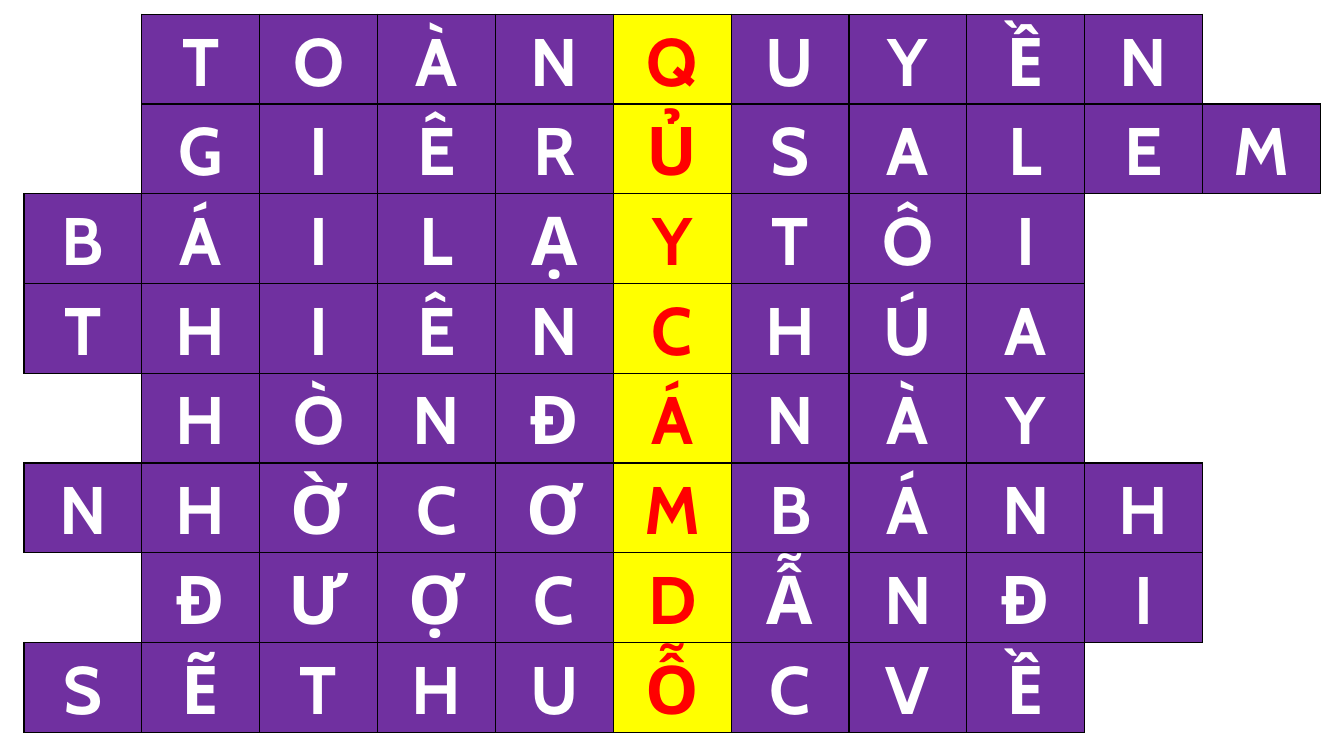
from lxml import etree
from pptx import Presentation
from pptx.dml.color import RGBColor
from pptx.enum import text
from pptx.oxml import ns
from pptx.util import Pt

PURPLE = RGBColor(0x70, 0x30, 0xA0)
YELLOW = RGBColor(0xFF, 0xFF, 0x00)
RED = RGBColor(0xFF, 0x00, 0x00)
WHITE = RGBColor(0xFF, 0xFF, 0xFF)
BLACK = RGBColor(0x00, 0x00, 0x00)

# Each answer with its first column
ANSWERS = [
    (1, "TOÀNQUYỀN"),
    (1, "GIÊRỦSALEM"),
    (0, "BÁILẠYTÔI"),
    (0, "THIÊNCHÚA"),
    (1, "HÒNĐÁNÀY"),
    (0, "NHỜCƠMBÁNH"),
    (1, "ĐƯỢCDẪNĐI"),
    (0, "SẼTHUỖCVỀ"),
]
ROWS, COLS, KEY = len(ANSWERS), 11, 5
WIDE, HIGH = 84.2, 64.1
SIDES = {"L": (0, -1), "R": (0, 1), "T": (-1, 0), "B": (1, 0)}


def add_edge(cell, side, drawn):
    props = cell._tc.get_or_add_tcPr()
    line = etree.SubElement(props, ns.qn("a:ln" + side), w=str(Pt(1)))
    if drawn:
        fill = etree.SubElement(line, ns.qn("a:solidFill"))
        etree.SubElement(fill, ns.qn("a:srgbClr"), val=str(BLACK))
    else:
        etree.SubElement(line, ns.qn("a:noFill"))


# Slide
deck = Presentation()
deck.slide_width, deck.slide_height = Pt(960), Pt(540)
slide = deck.slides.add_slide(deck.slide_layouts[6])

# Crossword grid
frame = slide.shapes.add_table(ROWS, COLS, Pt(17.1), Pt(10.2),
                               Pt(WIDE * COLS), Pt(HIGH * ROWS))
grid = frame.table
grid.first_row = grid.horz_banding = False
for col in grid.columns:
    col.width = Pt(WIDE)
for row in grid.rows:
    row.height = Pt(HIGH)

# Letters by place
letters = {(r, start + i): letter
           for r, (start, word) in enumerate(ANSWERS)
           for i, letter in enumerate(word)}

for r in range(ROWS):
    for c in range(COLS):
        cell = grid.cell(r, c)
        letter = letters.get((r, c))

        # An edge shows where a letter stands on either side of it
        for side, (down, right) in SIDES.items():
            add_edge(cell, side, letter or (r + down, c + right) in letters)

        cell.fill.solid()
        if not letter:
            cell.fill.fore_color.rgb = WHITE
            continue
        cell.fill.fore_color.rgb = YELLOW if c == KEY else PURPLE

        # Letter
        cell.vertical_anchor = text.MSO_ANCHOR.MIDDLE
        cell.margin_left = cell.margin_right = Pt(5)
        cell.margin_top = cell.margin_bottom = Pt(0)
        para = cell.text_frame.paragraphs[0]
        para.alignment = text.PP_ALIGN.CENTER
        para.line_spacing = 1.07
        para.space_after = Pt(8)
        run = para.add_run()
        run.text = letter
        run.font.name = "Cabin"
        run.font.size = Pt(48)
        run.font.bold = True
        run.font.color.rgb = RED if c == KEY else WHITE

deck.save("out.pptx")
